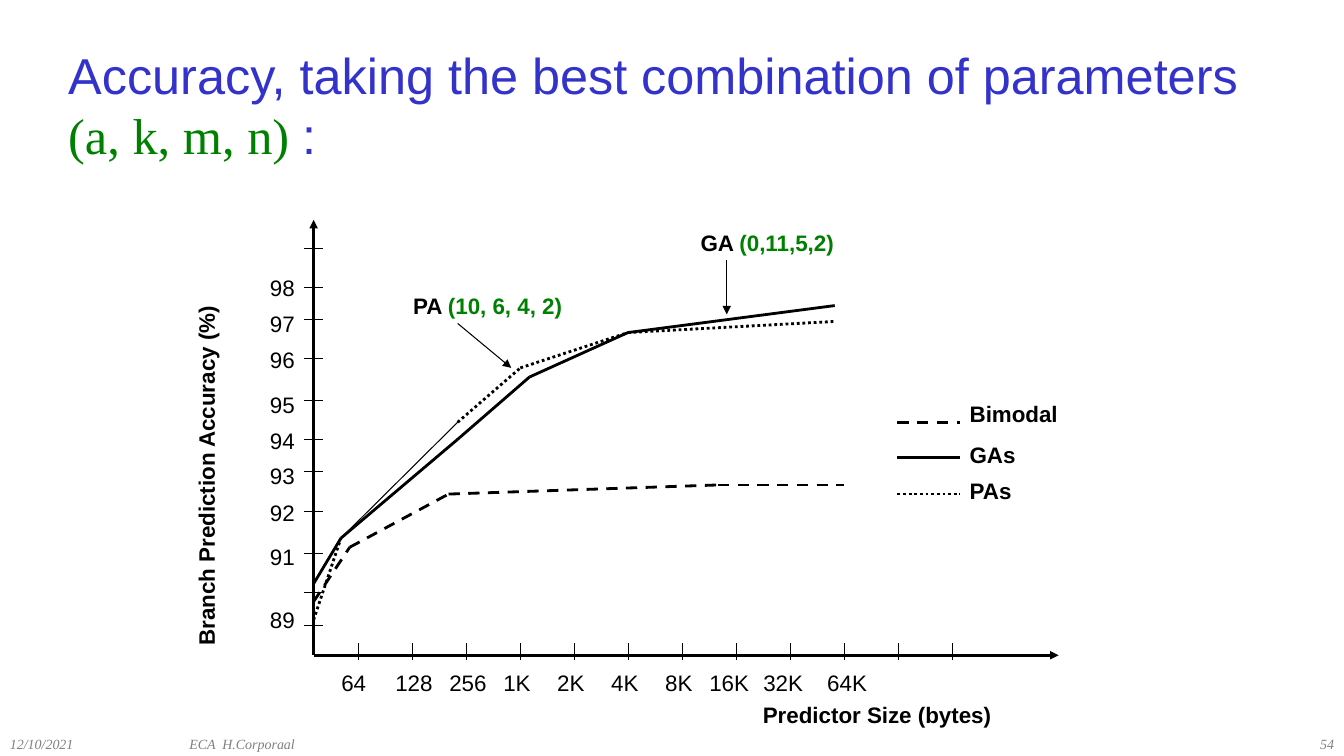
from itertools import pairwise
from pptx import Presentation
from pptx.dml.color import RGBColor
from pptx.enum.dml import MSO_LINE
from pptx.enum.shapes import MSO_CONNECTOR
from pptx.enum.text import MSO_ANCHOR, PP_ALIGN
from pptx.oxml.ns import qn
from pptx.util import Cm, Pt
from lxml.etree import SubElement

BLACK, BLUE, GREEN, GRAY = "000000", "3333CC", "008000", "808080"
LABEL_HEIGHT = 1

X_LABELS = ["64", "128", "256", "1K", "2K", "4K", "8K", "16K", "32K", "64K"]
WIDE_X_LABELS = ("16K", "32K")
X_TICK_START, X_TICK_STEP, X_TICK_COUNT = 1.14, 1.36, 12
Y_TICKS = [0.76, 1.57, 2.57, 3.61, 4.62, 5.44, 6.43, 7.47, 8.46, 9.27, 10.26]
Y_LABELS = {"89": 1.35, "91": 2.95, "92": 4.06, "93": 4.98, "94": 5.87,
            "95": 6.78, "96": 7.92, "97": 8.81, "98": 9.73}
CURVES = [
    ([(0.69, 2.95), (3.63, 5.87)], 0.75, None),
    ([(0, 0.89), (0.69, 2.95)], 2, MSO_LINE.ROUND_DOT),
    ([(3.63, 5.87), (5.21, 7.24), (7.92, 8.13), (13.13, 8.41)], 2, MSO_LINE.ROUND_DOT),
    ([(0, 1.35), (0.91, 2.72), (3.4, 4.06), (10.19, 4.29), (13.36, 4.29)], 2, MSO_LINE.DASH),
    ([(0, 1.8), (0.69, 2.95), (3.63, 5.44), (5.44, 7.01), (7.92, 8.13), (13.13, 8.81)], 2, None),
]
LEGEND = [("Bimodal", 5.87, 6.55, MSO_LINE.DASH), ("GAs", 4.98, 5.51, None),
          ("PAs", 4.06, 4.62, MSO_LINE.ROUND_DOT)]


def color(value):
    return RGBColor.from_string(value)


def add_text(slide, box, parts, size, bold=False, italic=False,
             align=PP_ALIGN.LEFT, anchor=MSO_ANCHOR.TOP):
    shape = slide.shapes.add_textbox(*[Cm(length) for length in box])
    text_frame = shape.text_frame
    text_frame.word_wrap = True
    text_frame.vertical_anchor = anchor
    paragraph = text_frame.paragraphs[0]
    paragraph.alignment = align
    for text, font_name, font_color in parts:
        run = paragraph.add_run()
        run.text = text
        run.font.name = font_name
        run.font.size = Pt(size)
        run.font.bold = bold
        run.font.italic = italic
        run.font.color.rgb = color(font_color)
    return shape


def add_line(slide, start, end, width=0.75, dash=None, arrow=False):
    connector = slide.shapes.add_connector(
        MSO_CONNECTOR.STRAIGHT, *[Cm(length) for length in (*start, *end)])
    line = connector.line
    line.color.rgb = color(BLACK)
    line.width = Pt(width)
    if dash is not None:
        line.dash_style = dash
    properties = connector._element.spPr
    if arrow:
        SubElement(properties.find(qn("a:ln")), qn("a:tailEnd"), type="triangle")
    SubElement(properties, qn("a:effectLst"))


def add_title(slide, box):
    add_text(slide, box, [
        ("Accuracy, taking the best combination of parameters ", "Arial", BLUE),
        ("(a, k, m, n) ", "Times New Roman", GREEN),
        (":", "Arial", BLUE),
    ], 36, anchor=MSO_ANCHOR.MIDDLE)


def add_footer(slide, box):
    left, top, width, height = box
    fields = [("12/10/2021", 0, 4.52, PP_ALIGN.LEFT),
              ("ECA  H.Corporaal", 4.52, 10.72, PP_ALIGN.LEFT),
              ("54", width - 7.06, 7.06, PP_ALIGN.RIGHT)]
    for text, offset, field_width, align in fields:
        add_text(slide, (left + offset, top, field_width, height),
                 [(text, "Times New Roman", GRAY)], 10, italic=True, align=align)


def add_accuracy_plot(slide, box):
    left, top, width, height = box
    bottom = top + height

    def place(x, y):
        return left + x, bottom - y

    def line(start, end, *style, **options):
        add_line(slide, place(*start), place(*end), *style, **options)

    def label(x, y, label_width, text, detail="", bold=False):
        parts = [(text, "Arial", BLACK)]
        if detail:
            parts.append((detail, "Arial", GREEN))
        return add_text(slide, (*place(x, y), label_width, LABEL_HEIGHT),
                        parts, 16, bold)

    line((0, 0), (width, 0), 2, arrow=True)
    line((0, 0), (0, height), 2, arrow=True)
    x_ticks = [X_TICK_START + X_TICK_STEP * index for index in range(X_TICK_COUNT)]
    for x in x_ticks:
        line((x, -0.13), (x, 0.3))
    for y in Y_TICKS:
        line((-0.23, y), (0.23, y))
    for x, text in zip(x_ticks, X_LABELS):
        shift = 0.94 if text in WIDE_X_LABELS else 0.69
        label(x - shift, -0.23, 2, text)
    for text, y in Y_LABELS.items():
        label(-1.35, y, 1.35, text)

    label(11.07, -1.04, 7.92, "Predictor Size (bytes)", bold=True)
    label(-7.54, 5.36, 9.73, "Branch Prediction Accuracy (%)", bold=True).rotation = 270

    for points, line_width, dash in CURVES:
        for start, end in pairwise(points):
            line(start, end, line_width, dash)

    label(2.26, 9.27, 5.44, "PA ", "(10, 6, 4, 2)", bold=True)
    label(9.5, 10.85, 5.44, "GA ", "(0,11,5,2)", bold=True)
    line((3.63, 8.36), (4.98, 7.24), arrow=True)
    line((10.41, 9.96), (10.41, 8.59), arrow=True)

    for text, line_y, label_y, dash in LEGEND:
        line((14.71, line_y), (16.28, line_y), 2, dash)
        label(16.28, label_y, 3.84, text, bold=True)


def main():
    presentation = Presentation()
    presentation.slide_width = Cm(33.86)
    presentation.slide_height = Cm(19.05)
    slide = presentation.slides.add_slide(presentation.slide_layouts[6])
    add_title(slide, (1.47, 0.64, 31.5, 3.99))
    add_footer(slide, (0, 18.42, 33.86, 0.63))
    add_accuracy_plot(slide, (7.9, 5.54, 18.77, 10.97))
    presentation.save("out.pptx")


if __name__ == "__main__":
    main()
